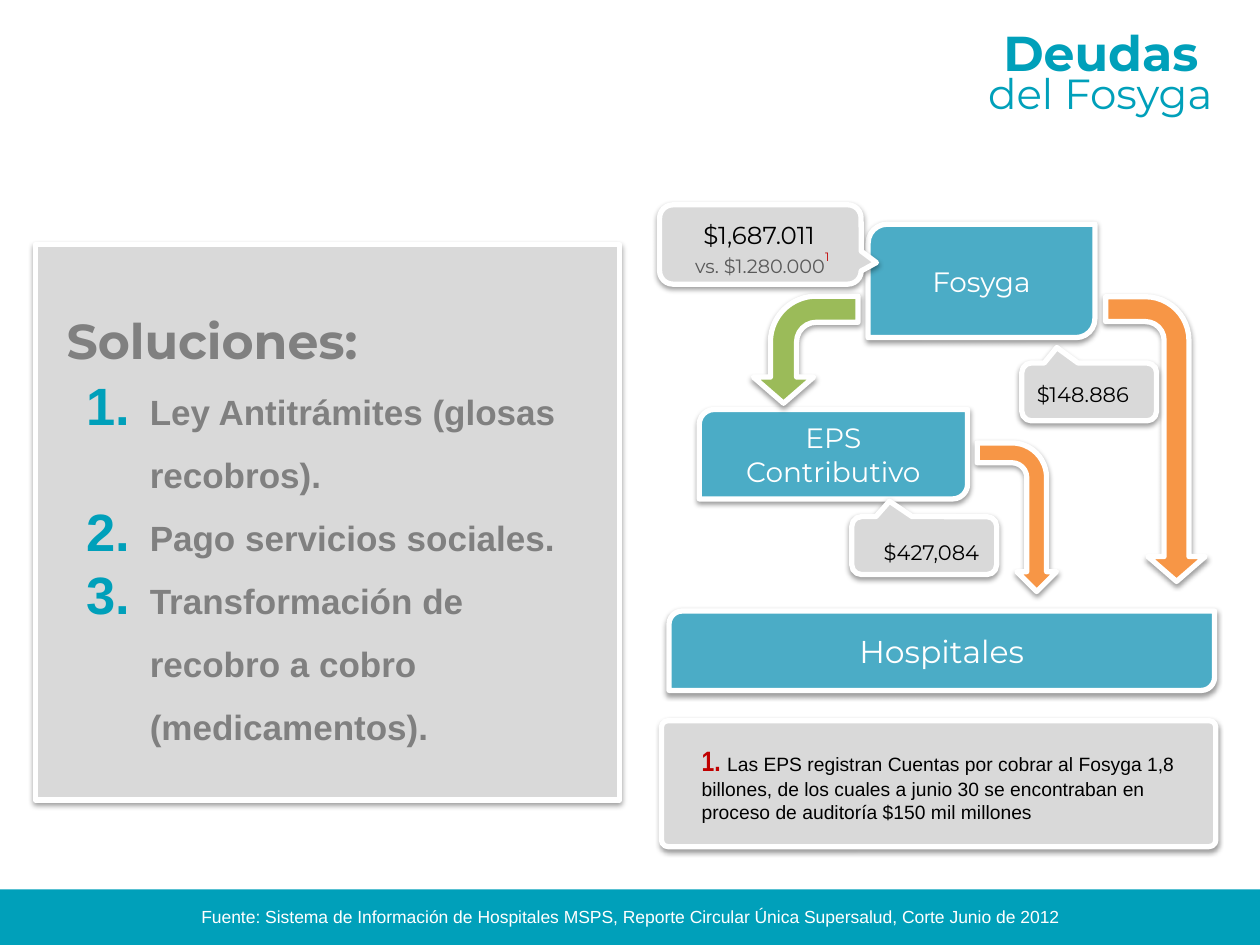
from lxml.etree import SubElement
from pptx import Presentation
from pptx.dml.color import RGBColor
from pptx.enum.shapes import MSO_SHAPE as SHAPE
from pptx.enum.text import MSO_ANCHOR as ANCHOR, MSO_AUTO_SIZE as AUTO, PP_ALIGN as ALIGN
from pptx.oxml.ns import qn
from pptx.util import Inches, Pt

# Grid of 100 columns by 75 rows, square cells
COLS, ROWS, CELL = 100, 75, Inches(0.1)
TEAL, BLUE, ORANGE, GREEN = "00A0BA", "4BACC6", "F79646", "9BBB59"
PANEL, GRAY, RED, WHITE, BLACK = "D9D9D9", "808080", "C00000", "FFFFFF", "000000"
MONT = "Montserrat"


def rgb(value):
    return RGBColor.from_string(value)


def grid(*cells):
    return [round(c * CELL) for c in cells]


def fmt(size, color, name=MONT, bold=False):
    return dict(size=Pt(size), color=color, name=name, bold=bold)


def add_run(p, text, style):
    r = p.add_run()
    r.text = text
    for key, value in style.items():
        if key == "color":
            r.font.color.rgb = rgb(value)
        else:
            setattr(r.font, key, value)
    return r


def write(tf, paragraphs, align=ALIGN.LEFT, anchor=ANCHOR.TOP, spacing=None, wrap=True):
    """Each paragraph is a list of (text, style) runs."""
    tf.auto_size, tf.word_wrap, tf.vertical_anchor = AUTO.NONE, wrap, anchor
    for i, runs in enumerate(paragraphs):
        p = tf.add_paragraph() if i else tf.paragraphs[0]
        p.alignment = align
        if spacing:
            p.line_spacing = spacing
        for text, style in runs:
            for j, line in enumerate(text.split("\n")):
                if j:
                    p.add_line_break()
                add_run(p, line, style)
    return tf


def add_text(s, at, paragraphs, **options):
    return write(s.shapes.add_textbox(*grid(*at)).text_frame, paragraphs, **options)


def add_shadow(sp):
    effects = sp.element.spPr.find(qn("a:effectLst"))
    shadow = SubElement(effects, qn("a:outerShdw"), blurRad=str(Pt(3.1)),
                        dist=str(Pt(1.6)), dir="5400000", algn="ctr", rotWithShape="0")
    color = SubElement(shadow, qn("a:srgbClr"), val=BLACK)
    SubElement(color, qn("a:alpha"), val="38000")


def add_card(s, kind, at, fill, adj=(), rotation=0, flip=None):
    """Filled shape with a white outline and a soft shadow."""
    sp = s.shapes.add_shape(kind, *grid(*at))
    sp.shadow.inherit = False
    sp.fill.solid()
    sp.fill.fore_color.rgb = rgb(fill)
    sp.line.color.rgb = rgb(WHITE)
    sp.line.width = Pt(3)
    sp.rotation = rotation
    for i, value in enumerate(adj):
        sp.adjustments[i] = value
    if flip:
        sp.element.spPr.xfrm.set(flip, "1")
    add_shadow(sp)
    return sp


def add_entity(s, at, text, size):
    sp = add_card(s, SHAPE.ROUND_2_DIAG_RECTANGLE, at, BLUE)
    write(sp.text_frame, [[(text, fmt(size, WHITE))]], ALIGN.CENTER, ANCHOR.MIDDLE)


def add_callout(s, at, adj, rotation=180, flip="flipH"):
    add_card(s, SHAPE.ROUNDED_RECTANGULAR_CALLOUT, at, PANEL, (*adj, 0.167), rotation, flip)


def number_paragraphs(tf):
    for p in tf.paragraphs:
        pPr = p._p.get_or_add_pPr()
        pPr.set("marL", str(Inches(0.5)))
        pPr.set("indent", str(-Inches(0.5)))
        SubElement(SubElement(pPr, qn("a:buClr")), qn("a:srgbClr"), val=TEAL)
        SubElement(pPr, qn("a:buSzPct"), val="150000")
        SubElement(pPr, qn("a:buFont"), typeface="+mj-lt")
        SubElement(pPr, qn("a:buAutoNum"), type="arabicPeriod")


def add_heading(s):
    title = s.shapes.title
    title.left, title.top, title.width, title.height = grid(77.4, 1, 19.8, 6.3)
    write(title.text_frame, [[("Deudas ", fmt(28, TEAL, bold=True))]],
          ALIGN.RIGHT, ANCHOR.MIDDLE)
    add_text(s, (75.5, 4.9, 21.7, 5), [[("del Fosyga", fmt(24, TEAL))]],
             align=ALIGN.RIGHT, wrap=False)


def add_footer(s):
    bar = s.shapes.add_shape(SHAPE.RECTANGLE, *grid(0, ROWS - 4.4, COLS, 4.4))
    bar.shadow.inherit = False
    bar.fill.solid()
    bar.fill.fore_color.rgb = rgb(TEAL)
    bar.line.fill.background()
    source = ("Fuente: Sistema de Información de Hospitales MSPS, "
              "Reporte Circular Única Supersalud, Corte Junio de 2012")
    add_text(s, (12, 71.4, 76, 4), [[(source, fmt(10, WHITE, "Arial"))]], align=ALIGN.CENTER)


def add_solutions(s):
    add_card(s, SHAPE.RECTANGLE, (2.8, 19.4, 46.4, 44.1), PANEL)
    add_text(s, (4.3, 21.8, 40.9, 7.3),
             [[("Soluciones:", fmt(28, GRAY, bold=True))]], spacing=1.5)
    items = ["Ley Antitrámites (glosas recobros).", "Pago servicios sociales.",
             "Transformación de recobro a cobro (medicamentos)."]
    style = fmt(20, GRAY, "Arial", True)
    number_paragraphs(add_text(s, (5.9, 28.8, 40.2, 31.3),
                               [[(item, style)] for item in items], spacing=1.5))


def add_flow(s):
    # Entities and the arrows between them
    add_entity(s, (53.1, 48.5, 43.3, 6.3), "Hospitales", 18)
    add_entity(s, (55.5, 32.5, 21.3, 7.1), "EPS\nContributivo", 16)
    add_entity(s, (68.9, 17.8, 18, 9), "Fosyga", 16)
    wide = (0.25, 0.288, 0.25, 0.438)
    for at, fill, adj, flip in [((74.8, 37.9, 11.8, 6.3), ORANGE, (), None),
                                ((80.4, 30.9, 22.6, 7.9), ORANGE, wide, None),
                                ((59.7, 23.6, 8.5, 8.3), GREEN, wide, "flipV")]:
        add_card(s, SHAPE.BENT_ARROW, at, fill, adj, 90, flip)

    # Amounts in callouts
    add_callout(s, (57.2, 11.4, 6.3, 16), (-0.228, 0.576), 270, None)
    tf = add_text(s, (52.1, 17, 16.8, 5.2),
                  [[("$1,687.011 ", fmt(14, BLACK))],
                   [("vs. $1.280.000", fmt(11, "595959")), ("1", fmt(12, RED))]],
                  align=ALIGN.CENTER)
    tf.paragraphs[1].runs[1].font._element.set("baseline", "56000")
    for box, label, text, align in [
            ((81.1, 28.8, 10.7, 4.6), (81.3, 29.8, 11.8, 3), "$148.886", ALIGN.LEFT),
            ((67.6, 41, 11.5, 4.6), (68.1, 42.3, 10.6, 3), "$427,084", ALIGN.RIGHT)]:
        add_callout(s, box, (-0.24, 0.766))
        add_text(s, label, [[(text, fmt(12, BLACK))]], align=align)


def add_note(s):
    add_card(s, SHAPE.ROUNDED_RECTANGLE, (52.5, 57.2, 44, 10), PANEL, (0.053,), flip="flipV")
    note = ("Las EPS registran Cuentas por cobrar al Fosyga 1,8 billones, de los cuales "
            "a junio 30 se encontraban en proceso de auditoría $150 mil millones")
    add_text(s, (54.7, 58.5, 41.7, 9.8), [[("1. ", fmt(16, RED, "Arial Narrow", True)),
                                           (note, fmt(11, BLACK, "Arial"))]])


def main():
    prs = Presentation()
    prs.slide_width, prs.slide_height = grid(COLS, ROWS)
    s = prs.slides.add_slide(prs.slide_layouts[5])
    for add_part in (add_footer, add_heading, add_solutions, add_flow, add_note):
        add_part(s)
    prs.save("out.pptx")


if __name__ == "__main__":
    main()
